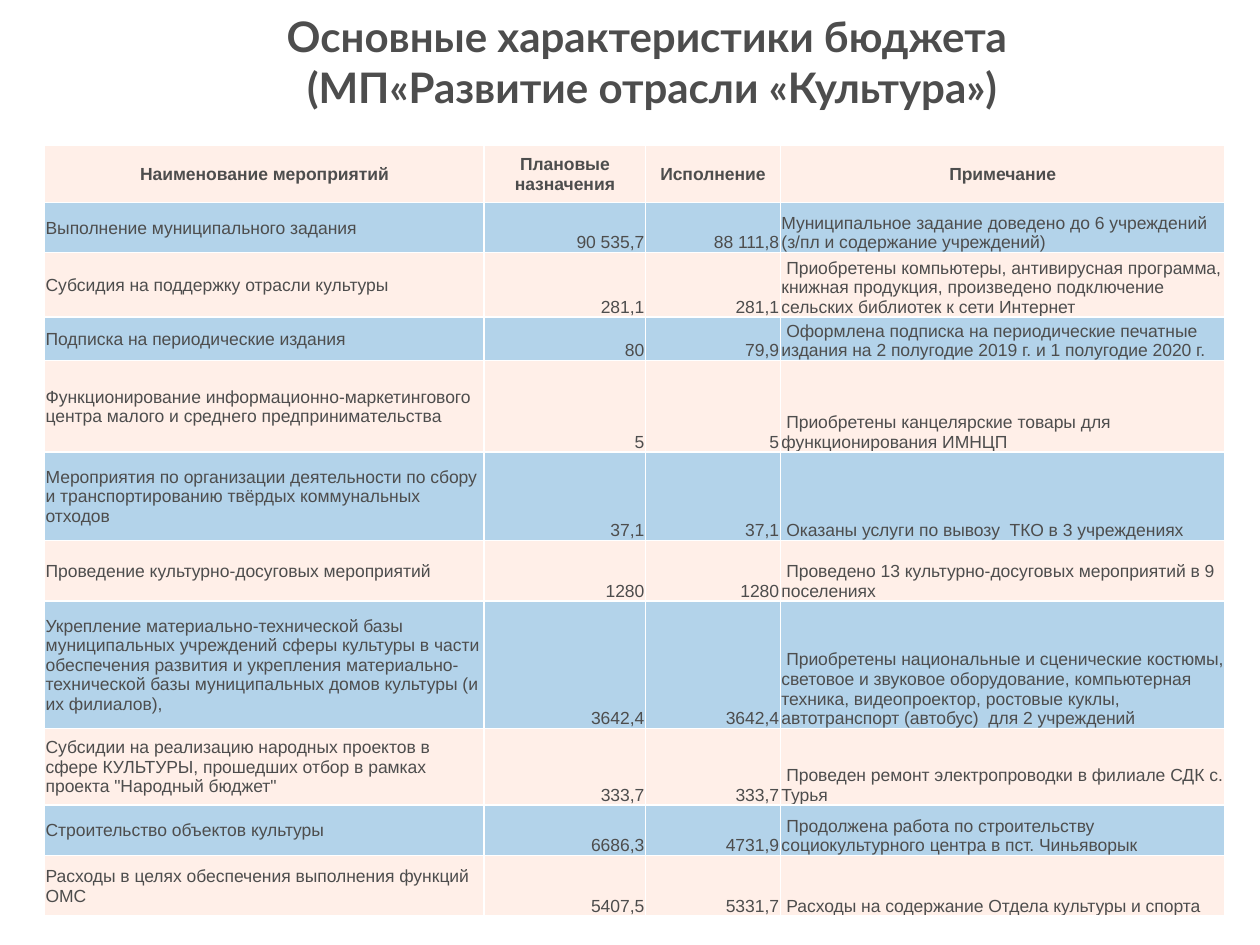
"""Build the slide on the budget of the culture programme."""
from lxml.etree import SubElement
from pptx import Presentation
from pptx.dml.color import RGBColor as RGB
from pptx.enum.text import MSO_ANCHOR as ANCHOR, PP_ALIGN as ALIGN
from pptx.oxml.ns import qn
from pptx.util import Pt

COLOURS = {"text": "4D4D4D", "pink": "FFEFE8", "blue": "B3D3EA", "border": "FFFFFF"}
TITLE = "Основные характеристики бюджета \n(МП«Развитие отрасли «Культура»)"
HEADINGS = ("Наименование мероприятий", "Плановые назначения", "Исполнение", "Примечание")
ACTIVITIES = [
    ("Выполнение муниципального задания", "90 535,7", "88 111,8",
     "Муниципальное задание доведено до 6 учреждений (з/пл и содержание учреждений)"),
    ("Субсидия на поддержку отрасли культуры", "281,1", "281,1",
     " Приобретены компьютеры, антивирусная программа, книжная продукция, "
     "произведено подключение сельских библиотек к сети Интернет"),
    ("Подписка на периодические издания", "80", "79,9",
     " Оформлена подписка на периодические печатные издания на 2 полугодие 2019 г. "
     "и 1 полугодие 2020 г."),
    ("Функционирование информационно-маркетингового центра малого и среднего "
     "предпринимательства", "5", "5",
     " Приобретены канцелярские товары для функционирования ИМНЦП"),
    ("Мероприятия по организации деятельности по сбору и транспортированию твёрдых "
     "коммунальных отходов", "37,1", "37,1",
     " Оказаны услуги по вывозу  ТКО в 3 учреждениях"),
    ("Проведение культурно-досуговых мероприятий", "1280", "1280",
     " Проведено 13 культурно-досуговых мероприятий в 9 поселениях"),
    ("Укрепление материально-технической базы муниципальных учреждений сферы культуры "
     "в части обеспечения развития и укрепления материально-технической базы "
     "муниципальных домов культуры (и их филиалов),", "3642,4", "3642,4",
     " Приобретены национальные и сценические костюмы, световое и звуковое оборудование, "
     "компьютерная техника, видеопроектор, ростовые куклы, автотранспорт (автобус)  "
     "для 2 учреждений"),
    ("Субсидии на реализацию народных проектов в сфере КУЛЬТУРЫ, прошедших отбор "
     "в рамках проекта \"Народный бюджет\"", "333,7", "333,7",
     " Проведен ремонт электропроводки в филиале СДК с. Турья"),
    ("Строительство объектов культуры", "6686,3", "4731,9",
     " Продолжена работа по строительству социокультурного центра в пст. Чиньяворык"),
    ("Расходы в целях обеспечения выполнения функций ОМС", "5407,5", "5331,7",
     " Расходы на содержание Отдела культуры и спорта"),
]
COLUMN_WIDTHS = (251.3, 92.2, 77, 254.2)
ROW_HEIGHTS = (32.4, 28.8, 34.6, 22.5, 52.5, 50.4, 34.6, 72.8, 43.9, 28.8, 34.6)
COLUMN_ALIGNS = (ALIGN.LEFT, ALIGN.RIGHT, ALIGN.RIGHT, ALIGN.LEFT)
TITLE_FONT = {"name": "Lato", "size": Pt(24), "bold": True}
HEADING_FONT = {"name": "Arial", "size": Pt(10), "bold": True}
BODY_FONT = HEADING_FONT | {"bold": False}
CELL_FORMAT = {"margin_left": Pt(0.7), "margin_top": Pt(0.7),
               "margin_right": Pt(0.7), "margin_bottom": 0}


def apply(target, values):
    for name, value in values.items():
        setattr(target, name, value)


def write(frame, words, align, font):
    paragraph = frame.paragraphs[0]
    paragraph.text = words
    paragraph.alignment = align
    apply(paragraph.font, font)
    paragraph.font.color.rgb = RGB.from_string(COLOURS["text"])


def add_borders(cell):
    properties = cell._tc.get_or_add_tcPr()
    for place, side in enumerate(("lnL", "lnR", "lnT", "lnB")):
        line = SubElement(properties, qn(f"a:{side}"), w=str(Pt(1)))
        SubElement(SubElement(line, qn("a:solidFill")), qn("a:srgbClr"), val=COLOURS["border"])
        properties.insert(place, line)


def add_title(slide):
    title = slide.shapes.add_textbox(Pt(93.6), Pt(15.1), Pt(558), Pt(39.6)).text_frame
    apply(title, {"word_wrap": True, "vertical_anchor": ANCHOR.MIDDLE})
    write(title, TITLE, ALIGN.CENTER, TITLE_FONT)


def add_budget(slide):
    rows = [HEADINGS, *ACTIVITIES]
    budget = slide.shapes.add_table(len(rows), len(HEADINGS), Pt(25.4), Pt(83.2),
                                    Pt(sum(COLUMN_WIDTHS)), Pt(sum(ROW_HEIGHTS))).table
    for column, width in zip(budget.columns, COLUMN_WIDTHS):
        column.width = Pt(width)
    for r, (row, height, entries) in enumerate(zip(budget.rows, ROW_HEIGHTS, rows)):
        row.height = Pt(height)
        for c, (cell, words) in enumerate(zip(row.cells, entries)):
            heading = r == 0
            write(cell.text_frame, words, ALIGN.CENTER if heading else COLUMN_ALIGNS[c],
                  HEADING_FONT if heading else BODY_FONT)
            apply(cell, CELL_FORMAT)
            cell.vertical_anchor = ANCHOR.MIDDLE if heading or c == 0 else ANCHOR.BOTTOM
            cell.fill.solid()
            cell.fill.fore_color.rgb = RGB.from_string(COLOURS["blue" if r % 2 else "pink"])
            add_borders(cell)


def main():
    deck = Presentation()
    apply(deck, {"slide_width": Pt(720), "slide_height": Pt(540)})
    slide = deck.slides.add_slide(deck.slide_layouts[6])
    add_title(slide)
    add_budget(slide)
    deck.save("out.pptx")


if __name__ == "__main__":
    main()
